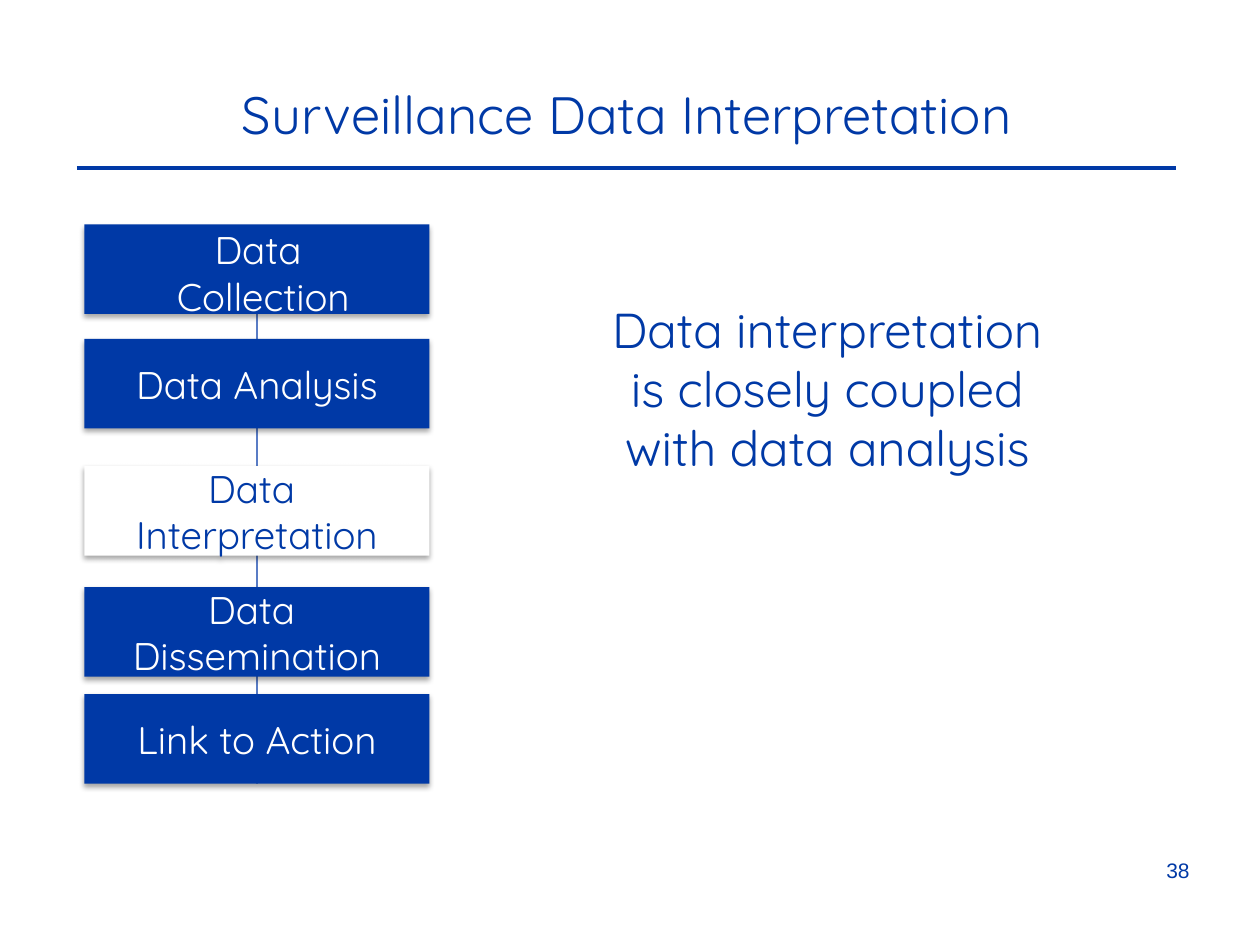
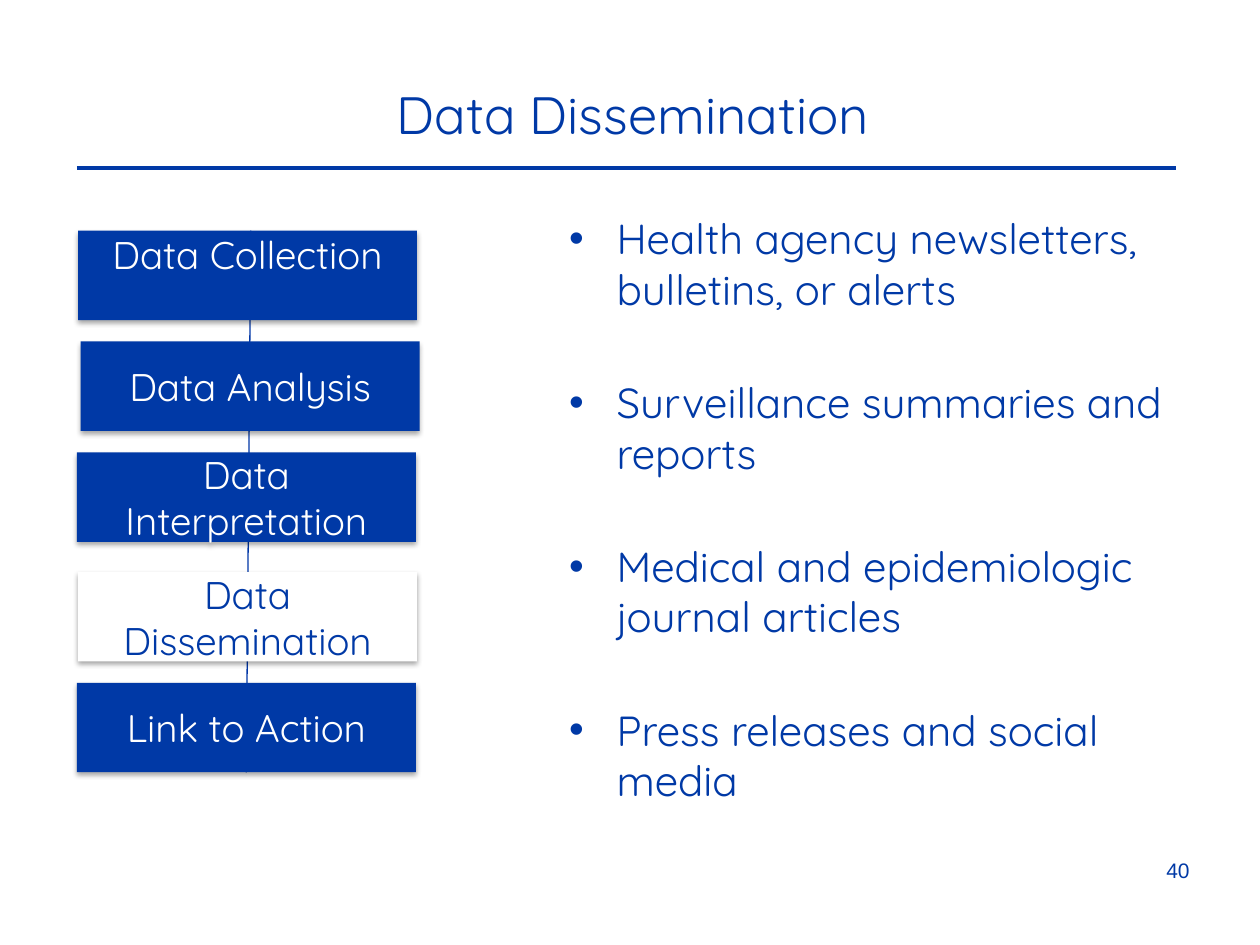
from lxml import etree
from pptx import Presentation
from pptx import util as u
from pptx.dml.color import RGBColor
from pptx.enum import shapes, text
from pptx.oxml import parse_xml
from pptx.oxml.ns import nsdecls, qn

COLORS = {"blue": "0039A6", "spine": "0036A6", "white": "FFFFFF", "shadow": "000000"}
FONT = "Quicksand"
STAGE_HEIGHT = 51.1


def rgb(name):
    """Return the named colour."""
    return RGBColor.from_string(COLORS[name])


def style(paragraph, size, color="blue", align=text.PP_ALIGN.CENTER, font=FONT):
    """Set the font and alignment of a paragraph."""
    paragraph.alignment = align
    paragraph.font.name = font
    paragraph.font.size = u.Pt(size)
    paragraph.font.color.rgb = rgb(color)


def add_frame(slide, left, top, width, height):
    """Add a wrapping text box and return its text frame."""
    frame = slide.shapes.add_textbox(*map(u.Pt, (left, top, width, height))).text_frame
    frame.word_wrap = True
    return frame


def add_label(slide, wording, bounds, size, **look):
    """Add a text box with one paragraph."""
    paragraph = add_frame(slide, *bounds).paragraphs[0]
    paragraph.text = wording
    style(paragraph, size, **look)


def add_line(slide, start, end, color, weight):
    """Add a straight line without shadow."""
    line = slide.shapes.add_connector(
        shapes.MSO_CONNECTOR.STRAIGHT, *map(u.Pt, (*start, *end)))
    line.line.color.rgb = rgb(color)
    line.line.width = u.Pt(weight)
    etree.SubElement(line._element.spPr, qn("a:effectLst"))
    return line


def add_base(prs, title, number, title_left):
    """Add a slide with title, rule and page number."""
    slide = prs.slides.add_slide(prs.slide_layouts[6])
    add_line(slide, (43.9, 96), (671.8, 96), "blue", 2)
    add_label(slide, title, (title_left, 43.2, 588.2, 43.9), 30)
    add_label(slide, number, (519.1, 486.7, 167.8, 37.4), 12,
              align=text.PP_ALIGN.RIGHT, font="Arial")
    return slide


def add_shadow(shape):
    """Give a shape a soft shadow below it."""
    shape.shadow.inherit = False
    effects = shape._element.spPr.find(qn("a:effectLst"))
    effects.append(parse_xml(
        f'<a:outerShdw {nsdecls("a")} blurRad="{u.Pt(3.1)}" dist="{u.Pt(1.8)}" '
        f'dir="5400000" rotWithShape="0"><a:srgbClr val="{COLORS["shadow"]}">'
        '<a:alpha val="35000"/></a:srgbClr></a:outerShdw>'))


def add_stage(slide, label, left, top, width, current):
    """Add one stage of the surveillance process."""
    stage = slide.shapes.add_shape(
        shapes.MSO_SHAPE.RECTANGLE, *map(u.Pt, (left, top, width, STAGE_HEIGHT)))
    stage.fill.solid()
    stage.fill.fore_color.rgb = rgb("white" if current else "blue")
    stage.line.fill.background()
    add_shadow(stage)
    frame = stage.text_frame
    frame.word_wrap = True
    frame.vertical_anchor = text.MSO_ANCHOR.MIDDLE
    frame.margin_left = frame.margin_right = u.Pt(14.4)
    frame.margin_top = frame.margin_bottom = 0
    for index, wording in enumerate(label.split("\n")):
        paragraph = frame.add_paragraph() if index else frame.paragraphs[0]
        paragraph.text = wording
        style(paragraph, 22, "blue" if current else "white")
    return stage


def add_process(slide, stages, width, current, spine_start, spine_end):
    """Add the spine and the stages on it, with one stage highlighted."""
    spine = add_line(slide, spine_start, spine_end, "spine", 0.75)
    boxes = [add_stage(slide, label, left, top, width, index == current)
             for index, (label, left, top) in enumerate(stages)]
    spine.end_connect(boxes[-1], 2)
    return boxes


def add_bullets(slide, items, bounds):
    """Add a bulleted list with wide gaps between items."""
    frame = add_frame(slide, *bounds)
    for index, item in enumerate(items):
        paragraph = frame.add_paragraph() if index else frame.paragraphs[0]
        paragraph.text = item
        properties = paragraph._p.get_or_add_pPr()
        properties.set("marL", str(u.Pt(27)))
        properties.set("indent", str(u.Pt(-27)))
        etree.SubElement(properties, qn("a:buFont"), typeface="Arial")
        etree.SubElement(properties, qn("a:buChar"), char="•")
        style(paragraph, 24, align=text.PP_ALIGN.LEFT)
        if index:
            paragraph.space_before = u.Pt(36)


def add_interpretation(prs):
    """Add the slide on data interpretation."""
    slide = add_base(prs, "Surveillance Data Interpretation", "38", 64.1)
    stages = [("Data \nCollection", 48.2, 128.2), ("Data Analysis", 48.2, 193.7),
              ("Data \nInterpretation", 48.2, 266.4),
              ("Data \nDissemination", 48.2, 335.5), ("Link to Action", 48.2, 396.7)]
    collection = add_process(slide, stages, 197.3, 2, (146.9, 136.1), (146.2, 447.8))[0]
    collection.text_frame.margin_right = u.Pt(7.2)
    collection.text_frame.margin_top = u.Pt(4)
    add_label(slide, "Data interpretation is closely coupled with data analysis",
              (332.6, 167.8, 280.1, 108.7), 28)


def add_dissemination(prs):
    """Add the slide on data dissemination."""
    slide = add_base(prs, "Data Dissemination", "40", 67.7)
    stages = [("Data Collection", 44.6, 131.8), ("Data Analysis", 46.1, 195.1),
              ("Data Interpretation", 43.9, 258.5),
              ("Data Dissemination", 44.6, 326.9), ("Link to Action", 43.9, 390.2)]
    collection = add_process(slide, stages, 193.7, 3, (143.3, 131.8), (141.1, 441.4))[0]
    collection.text_frame.vertical_anchor = text.MSO_ANCHOR.TOP
    add_bullets(slide, ["Health agency newsletters, bulletins, or alerts",
                        "Surveillance summaries and reports",
                        "Medical and epidemiologic journal articles",
                        "Press releases and social media"],
                (318.2, 118.1, 383, 353.5))


def main():
    """Build and save the presentation."""
    prs = Presentation()
    prs.slide_width, prs.slide_height = u.Pt(720), u.Pt(540)
    add_interpretation(prs)
    add_dissemination(prs)
    prs.save("out.pptx")


if __name__ == "__main__":
    main()
